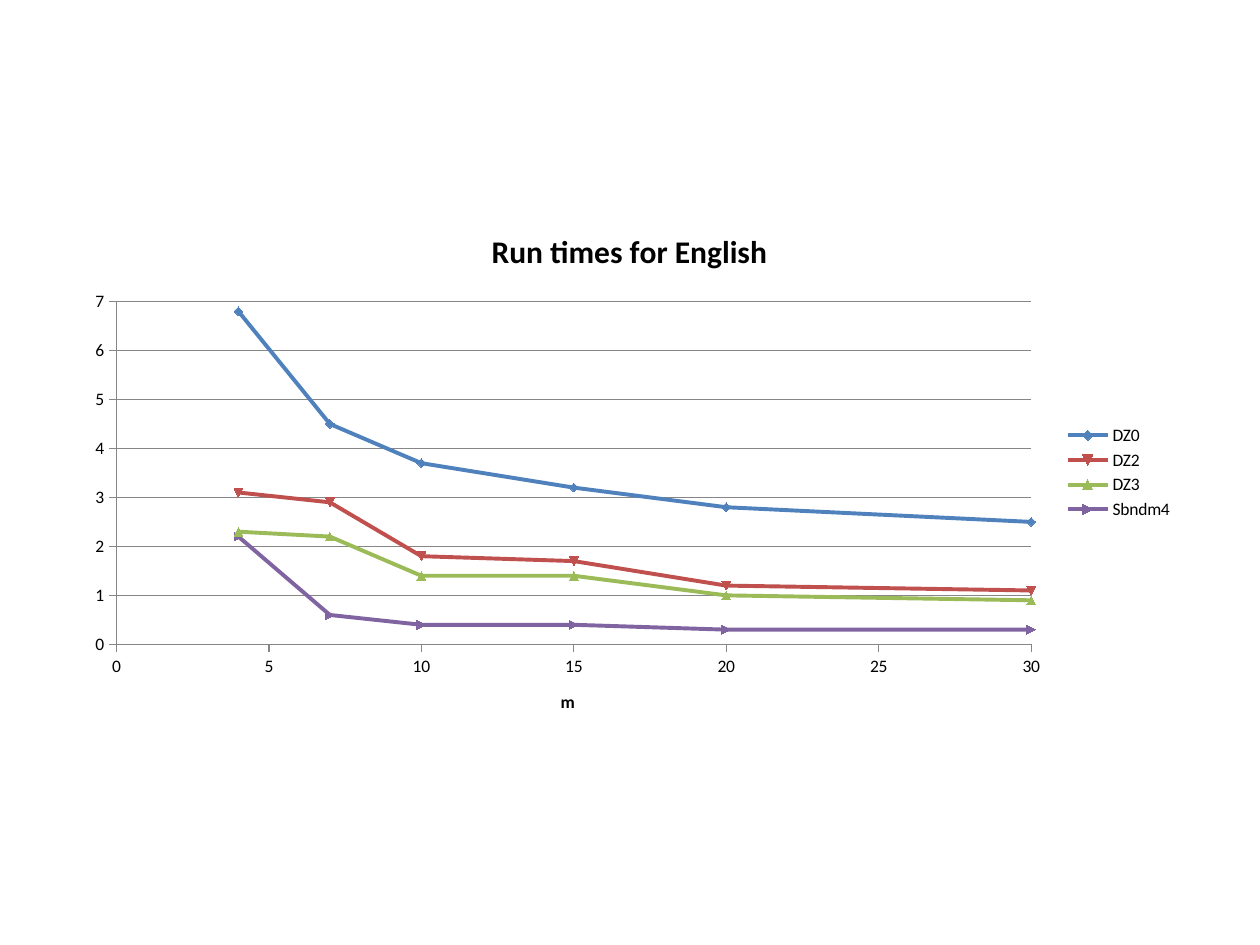
from dataclasses import dataclass

from pptx import Presentation
from pptx import util as u
from pptx.chart.data import XyChartData
from pptx.dml.color import RGBColor
from pptx.enum import chart as ch

COLORS = {
    "text": "000000",
    "axis": "868686",
    "blue": "4F81BD",
    "red": "C0504D",
    "green": "9BBB59",
    "purple": "8064A2",
}
FONT = "Calibri"
PATTERN_LENGTHS = (4, 7, 10, 15, 20, 30)


@dataclass(frozen=True)
class Algorithm:
    name: str
    color: str
    times: tuple[float, ...]


ALGORITHMS = (
    Algorithm("DZ0", "blue", (6.8, 4.5, 3.7, 3.2, 2.8, 2.5)),
    Algorithm("DZ2", "red", (3.1, 2.9, 1.8, 1.7, 1.2, 1.1)),
    Algorithm("DZ3", "green", (2.3, 2.2, 1.4, 1.4, 1, 0.9)),
    Algorithm("Sbndm4", "purple", (2.2, 0.6, 0.4, 0.4, 0.3, 0.3)),
)


def rgb(name: str) -> RGBColor:
    return RGBColor.from_string(COLORS[name])


def format_font(font, *, size: float, bold: bool = False, color: str = "text") -> None:
    font.name = FONT
    font.size = u.Pt(size)
    font.bold = bold
    font.color.rgb = rgb(color)


def add_title(owner, text: str, *, size: float, bold: bool = True) -> None:
    """Give a chart or an axis a title."""
    tf = (owner.chart_title if hasattr(owner, "chart_title") else owner.axis_title).text_frame
    r = tf.paragraphs[0].add_run()
    r.text = text
    format_font(r.font, size=size, bold=bold)


def format_line(line, color: str, width: float) -> None:
    line.color.rgb = rgb(color)
    line.width = u.Pt(width)


def format_axis(axis, *, maximum: float, step: float, grid: bool) -> None:
    axis.minimum_scale = 0
    axis.maximum_scale = maximum
    axis.major_unit = step
    axis.major_tick_mark = ch.XL_TICK_MARK.OUTSIDE
    axis.minor_tick_mark = ch.XL_TICK_MARK.NONE
    axis.has_major_gridlines = grid
    axis.tick_labels.number_format = "General"
    axis.tick_labels.number_format_is_linked = False
    format_font(axis.tick_labels.font, size=10)
    format_line(axis.format.line, "axis", 0.75)
    if grid:
        format_line(axis.major_gridlines.format.line, "axis", 0.75)


def format_series(series, color: str) -> None:
    series.smooth = True
    format_line(series.format.line, color, 2.25)
    marker = series.marker.format
    marker.fill.solid()
    marker.fill.fore_color.rgb = rgb(color)
    format_line(marker.line, color, 0.75)


def add_run_time_chart(s) -> None:
    data = XyChartData()
    for algorithm in ALGORITHMS:
        series = data.add_series(algorithm.name)
        for m, time in zip(PATTERN_LENGTHS, algorithm.times):
            series.add_data_point(m, time)

    chart = s.shapes.add_chart(
        ch.XL_CHART_TYPE.XY_SCATTER_SMOOTH,
        u.Pt(41.8), u.Pt(118.1), u.Pt(635.8), u.Pt(303.8), data,
    ).chart
    format_font(chart.font, size=10)
    add_title(chart, "Run times for English", size=18)
    add_title(chart.category_axis, "m", size=10)
    format_axis(chart.category_axis, maximum=30, step=5, grid=False)
    format_axis(chart.value_axis, maximum=7, step=1, grid=True)

    chart.has_legend = True
    chart.legend.position = ch.XL_LEGEND_POSITION.RIGHT
    chart.legend.include_in_layout = False
    format_font(chart.legend.font, size=10)

    plot = chart.plots[0]
    plot.vary_by_categories = False
    for series, algorithm in zip(plot.series, ALGORITHMS):
        format_series(series, algorithm.color)


def main() -> None:
    prs = Presentation()
    prs.slide_width, prs.slide_height = u.Pt(720), u.Pt(540)
    s = prs.slides.add_slide(prs.slide_layouts[6])
    add_run_time_chart(s)
    prs.save("out.pptx")


if __name__ == "__main__":
    main()
